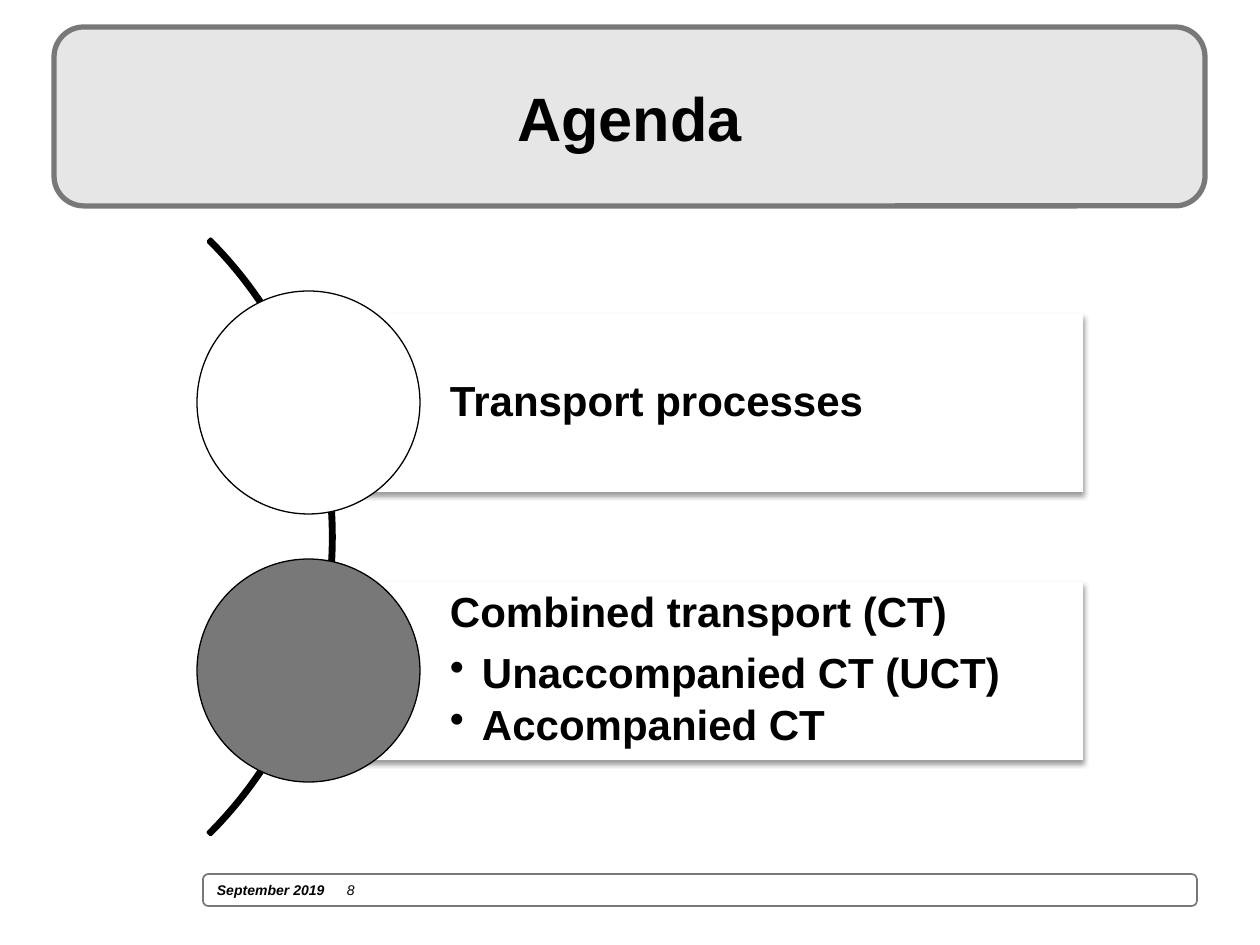
"""Build the agenda slide with two topics along an arc."""
import pptx
import pptx.util
import pptx.dml.color
import pptx.enum.shapes
import pptx.enum.text
import pptx.oxml
import pptx.oxml.ns

HUES = {"ink": "000000", "paper": "FFFFFF", "grey": "787878", "pale": "E7E6E6"}
TITLE = "Agenda"
DATE, PAGE = "September 2019", "8"
TOPICS = [
    {"dot": "paper", "head": "Transport processes", "subs": []},
    {"dot": "grey", "head": "Combined transport (CT)",
     "subs": ["Unaccompanied CT (UCT)", "Accompanied CT"]},
]
STEP = 268
SCALE = 914400 / 126
KINDS = pptx.enum.shapes.MSO_SHAPE
ANCHOR = pptx.enum.text.MSO_ANCHOR
ALIGN = pptx.enum.text.PP_ALIGN
SIDES = ("margin_left", "margin_top", "margin_right", "margin_bottom")


def px(num):
    return pptx.util.Emu(round(num * SCALE))


def tint(name):
    return pptx.dml.color.RGBColor.from_string(HUES[name])


def put(part, **form):
    for key, val in form.items():
        setattr(part, key, val)


def node(tag, attrs="", inner=""):
    space = pptx.oxml.ns.nsdecls("a")
    return pptx.oxml.parse_xml(f"<a:{tag} {space} {attrs}>{inner}</a:{tag}>")


def draw(slide, kind, box, fill=None, line=None, width=1):
    shape = slide.shapes.add_shape(kind, *map(px, box))
    shape.shadow.inherit = False
    if fill:
        shape.fill.solid()
        shape.fill.fore_color.rgb = tint(fill)
    else:
        shape.fill.background()
    if line:
        shape.line.color.rgb = tint(line)
        shape.line.width = pptx.util.Pt(width)
    else:
        shape.line.fill.background()
    return shape


def style(font, size, **form):
    put(font, name="Arial", size=pptx.util.Pt(size), bold=True)
    put(font, **form)
    font.color.rgb = tint("ink")


def label(slide, box, insets, anchor):
    frame = slide.shapes.add_textbox(*map(px, box)).text_frame
    put(frame, word_wrap=True, vertical_anchor=anchor)
    put(frame, **dict(zip(SIDES, map(px, insets))))
    return frame


def shade(shape):
    old = shape._element.spPr.find(pptx.oxml.ns.qn("a:effectLst"))
    old.append(node(
        "outerShdw", 'blurRad="40000" dist="20000" dir="5400000" rotWithShape="0"',
        '<a:srgbClr val="000000"><a:alpha val="38000"/></a:srgbClr>'))


def footer(slide):
    bar = draw(slide, KINDS.ROUNDED_RECTANGLE, (203, 874, 994, 32), "paper", "grey")
    frame = bar.text_frame
    frame.vertical_anchor = ANCHOR.MIDDLE
    para = frame.paragraphs[0]
    para.alignment = ALIGN.LEFT
    para._p.get_or_add_pPr().append(node(
        "tabLst", inner=f'<a:tab pos="{px(130)}" algn="l"/>'))
    for text, bold in ((DATE + "\t", True), (PAGE, False)):
        run = para.add_run()
        run.text = text
        style(run.font, 8, italic=True, bold=bold)


def title(slide):
    draw(slide, KINDS.ROUNDED_RECTANGLE, (54, 27, 1151, 179), "pale", "grey", 3)
    frame = label(slide, (74, 38, 1111, 157), (12, 6, 12, 6), ANCHOR.MIDDLE)
    para = frame.paragraphs[0]
    put(para, text=TITLE, alignment=ALIGN.CENTER)
    style(para.font, 35)


def topic(slide, row, item):
    drop = row * STEP
    box = (309, 314 + drop, 774, 178)
    shade(draw(slide, KINDS.RECTANGLE, box, "paper"))
    anchor = ANCHOR.TOP if item["subs"] else ANCHOR.MIDDLE
    frame = label(slide, box, (141, 9, 9, 9), anchor)
    for rank, text in enumerate([item["head"], *item["subs"]]):
        para = frame.add_paragraph() if rank else frame.paragraphs[0]
        after = 4 if rank else 9 if item["subs"] else 0
        put(para, text=text, line_spacing=0.9, space_after=pptx.util.Pt(after))
        if rank:
            para.level = 1
            props = para._p.get_or_add_pPr()
            props.set("marL", str(px(32)))
            props.set("indent", str(-px(32)))
            props.append(node("buChar", 'char="•"'))
        style(para.font, 24)
    draw(slide, KINDS.OVAL, (197, 291 + drop, 223, 223), item["dot"], "ink", 0.75)


def main():
    deck = pptx.Presentation()
    put(deck, slide_width=px(1260), slide_height=px(945))
    slide = deck.slides.add_slide(deck.slide_layouts[6])
    footer(slide)
    title(slide)
    arc = draw(slide, KINDS.BLOCK_ARC, (-508, 116, 842, 842), None, "ink", 2)
    for spot, val in enumerate((189, 27, 0.004)):
        arc.adjustments[spot] = val
    for row, item in enumerate(TOPICS):
        topic(slide, row, item)
    deck.save("out.pptx")


if __name__ == "__main__":
    main()
